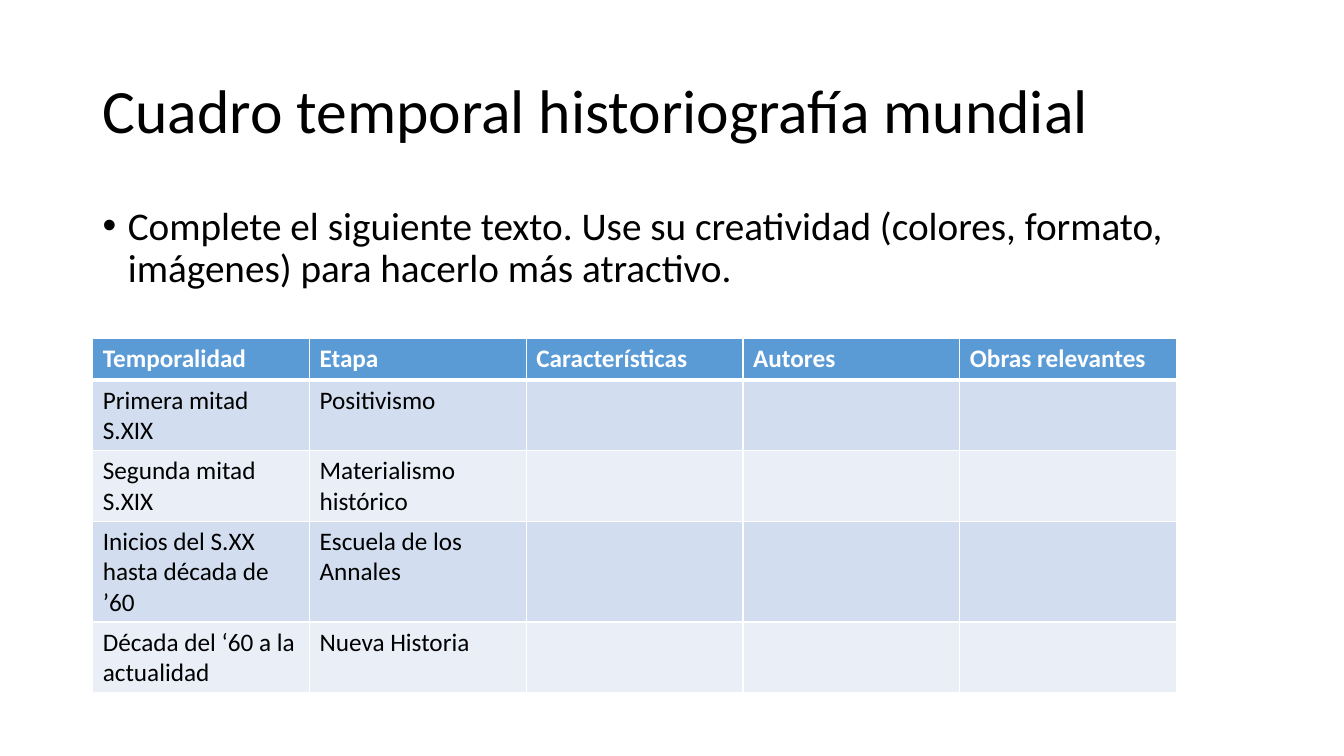
from lxml.etree import SubElement
from pptx import Presentation
from pptx.dml.color import RGBColor
from pptx.enum.text import MSO_ANCHOR as Anchor
from pptx.oxml import parse_xml
from pptx.oxml.ns import nsdecls, qn
from pptx.util import Inches, Pt

BLACK = RGBColor(0x00, 0x00, 0x00)
WHITE = RGBColor(0xFF, 0xFF, 0xFF)
BLUE = RGBColor(0x5B, 0x9B, 0xD5)
BANDS = [RGBColor(0xD2, 0xDE, 0xEF), RGBColor(0xEA, 0xEF, 0xF7)]

HEADS = ["Temporalidad", "Etapa", "Características", "Autores", "Obras relevantes"]
STAGES = [
    ("Primera mitad S.XIX", "Positivismo"),
    ("Segunda mitad S.XIX", "Materialismo histórico"),
    ("Inicios del S.XX hasta década de ’60", "Escuela de los Annales"),
    ("Década del ‘60 a la actualidad", "Nueva Historia"),
]


class Deck:
    font = "Calibri"

    def __init__(self):
        self.prs = Presentation()
        self.prs.slide_width = Inches(13.33)
        self.prs.slide_height = Inches(7.5)
        self.slide = self.prs.slides.add_slide(self.prs.slide_layouts[6])

    def style(self, para, size, color=BLACK, bold=False):
        for run in para.runs:
            run.font.name = self.font
            run.font.size = Pt(size)
            run.font.color.rgb = color
            run.font.bold = bold

    def text(self, words, box, size, anchor=Anchor.TOP):
        frame = self.slide.shapes.add_textbox(*map(Inches, box)).text_frame
        frame.word_wrap = True
        frame.vertical_anchor = anchor
        frame.text = words
        para = frame.paragraphs[0]
        para.line_spacing = 0.9
        self.style(para, size)
        return para

    def bullet(self, words, box, size):
        para = self.text(words, box, size)
        para.space_before = Pt(10)
        props = para._p.get_or_add_pPr()
        props.set("marL", str(Inches(0.25)))
        props.set("indent", str(-Inches(0.25)))
        SubElement(props, qn("a:buFont"), typeface="Arial")
        SubElement(props, qn("a:buChar"), char="•")

    def border(self, cell, low):
        """Draw white cell edges; low is the width of the bottom one in points."""
        props = cell._tc.get_or_add_tcPr()
        edges = [("L", 1), ("R", 1), ("T", 1), ("B", low)]
        for spot, (side, width) in enumerate(edges):
            props.insert(spot, parse_xml(
                f'<a:ln{side} {nsdecls("a")} w="{Pt(width)}"><a:solidFill>'
                f'<a:srgbClr val="{WHITE}"/></a:solidFill></a:ln{side}>'))

    def cell(self, cell, words, fill, color, head):
        cell.fill.solid()
        cell.fill.fore_color.rgb = fill
        cell.text_frame.text = words
        self.style(cell.text_frame.paragraphs[0], 18, color, head)
        self.border(cell, 3 if head else 1)

    def table(self, heads, rows, left, top, wide, high):
        """Place a banded table with columns of one width and rows of one height."""
        count = len(heads)
        grid = self.slide.shapes.add_table(
            len(rows) + 1, count, Inches(left), Inches(top),
            Inches(wide * count), Inches(high * (len(rows) + 1))).table
        for col, head in enumerate(heads):
            grid.columns[col].width = Inches(wide)
            self.cell(grid.cell(0, col), head, BLUE, WHITE, True)
            for row, words in enumerate(rows):
                entry = words[col] if col < len(words) else ""
                self.cell(grid.cell(row + 1, col), entry, BANDS[row % 2], BLACK, False)


def main():
    deck = Deck()
    deck.text("Cuadro temporal historiografía mundial",
              (0.92, 0.4, 11.5, 1.45), 44, Anchor.MIDDLE)
    deck.bullet("Complete el siguiente texto. Use su creatividad (colores, formato, "
                "imágenes) para hacerlo más atractivo.", (0.92, 2, 11.5, 4.76), 28)
    deck.table(HEADS, STAGES, 0.92, 3.36, 2.15, 0.41)
    deck.prs.save("out.pptx")


if __name__ == "__main__":
    main()
